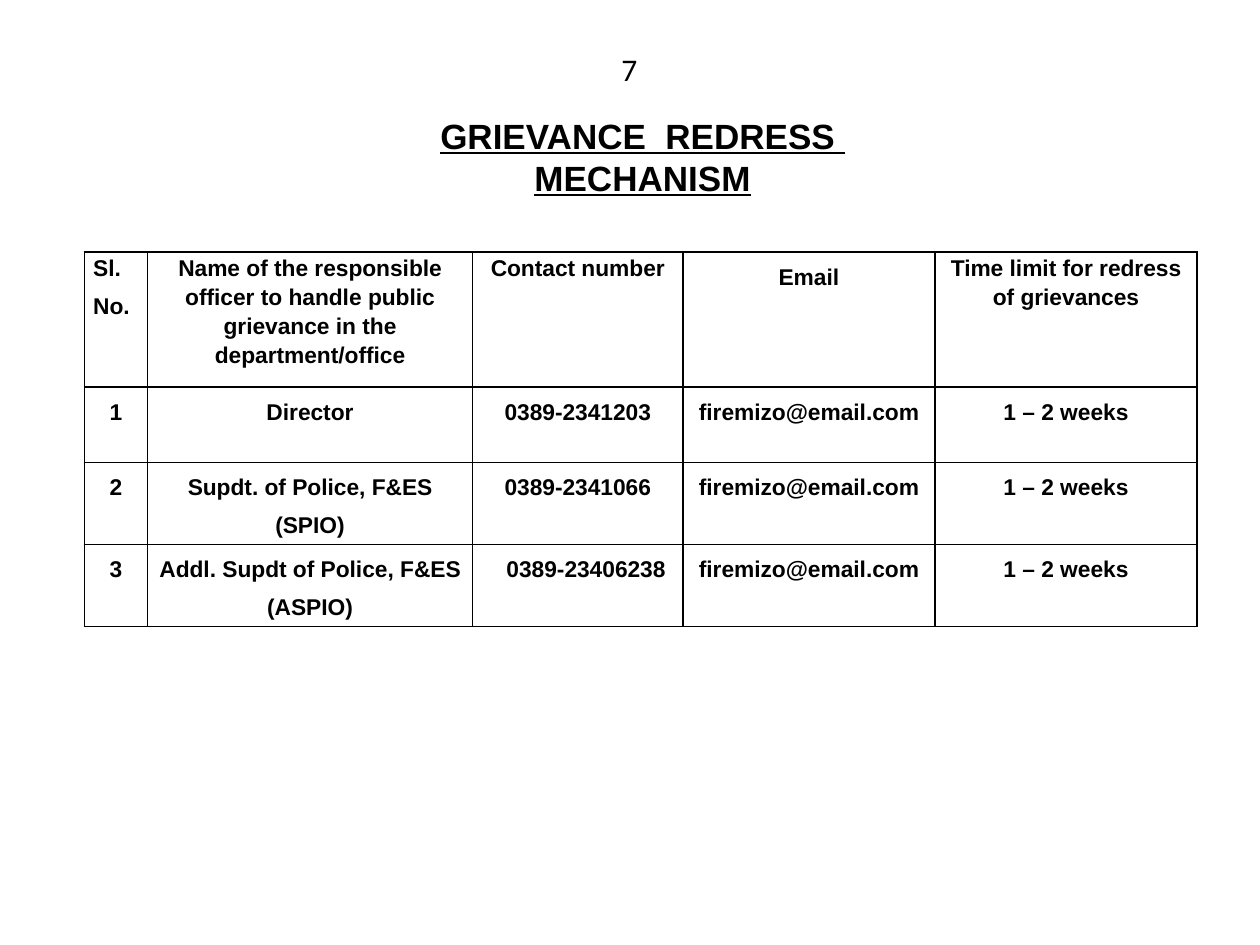
from lxml.etree import SubElement as Sub
from pptx import Presentation
from pptx.dml.color import RGBColor as RGB
from pptx.enum.text import MSO_ANCHOR as Anchor, PP_ALIGN as Align
from pptx.oxml.ns import qn
from pptx.util import Inches, Pt

HUES = {"ink": "000000", "page": "FFFFFF"}
COLS = [0.5, 2.58, 1.67, 2, 2.08]
ROWS = [1.07, 0.6, 0.65, 0.65]
MAIL, TIME = "firemizo@email.com", "1 – 2 weeks"
HEAD = ["Sl.\nNo.",
        "Name of the responsible officer to handle public grievance "
        "in the department/office",
        "Contact number", "Email", "Time limit for redress of grievances"]
STAFF = [("Director", "0389-2341203"),
         ("Supdt. of Police, F&ES\n(SPIO)", "0389-2341066"),
         ("Addl. Supdt of Police, F&ES\n(ASPIO)", "0389-23406238")]


def style(par, size, name="Arial", bold=True, line=False):
    font = par.font
    font.size, font.name, font.bold, font.underline = Pt(size), name, bold, line
    font.color.rgb = RGB.from_string(HUES["ink"])


def label(slide, box, text, anchor, **look):
    frame = slide.shapes.add_textbox(*map(Inches, box)).text_frame
    frame.word_wrap = False
    frame.vertical_anchor = anchor
    par = frame.paragraphs[0]
    par.text = text
    par.alignment = Align.CENTER
    style(par, **look)


def border(cell):
    props = cell._tc.get_or_add_tcPr()
    for i, side in enumerate(("lnL", "lnR", "lnT", "lnB")):
        line = props.makeelement(qn(f"a:{side}"), {"w": str(Pt(1))})
        fill = Sub(line, qn("a:solidFill"))
        Sub(fill, qn("a:srgbClr"), val=HUES["ink"])
        props.insert(i, line)


def fill_cell(cell, text, head):
    cell.margin_left = cell.margin_right = Inches(0.07)
    cell.margin_top = cell.margin_bottom = 0
    cell.fill.solid()
    cell.fill.fore_color.rgb = RGB.from_string(HUES["page"])
    border(cell)
    cell.text = text
    for i, par in enumerate(cell.text_frame.paragraphs):
        style(par, 13)
        par.alignment = Align.CENTER
        tight = head and i == 0 and text != "Email"
        par.line_spacing = 1.15 if tight else 1.5


def contacts(slide, left, top):
    data = [HEAD] + [[str(n), post, phone, MAIL, TIME]
                     for n, (post, phone) in enumerate(STAFF, 1)]
    box = map(Inches, (left, top, sum(COLS), sum(ROWS)))
    table = slide.shapes.add_table(len(ROWS), len(COLS), *box).table
    table.first_row = table.horz_banding = False
    for col, wide in zip(table.columns, COLS):
        col.width = Inches(wide)
    for r, (row, high) in enumerate(zip(table.rows, ROWS)):
        row.height = Inches(high)
        for cell, text in zip(row.cells, data[r]):
            fill_cell(cell, text, r == 0)
    for par in table.cell(0, 0).text_frame.paragraphs:
        par.alignment = Align.LEFT
    # The last phone number is set from the left, with an indent.
    phone = table.cell(3, 2)
    phone.margin_left = Inches(0.27)
    phone.margin_right = 0
    phone.text_frame.paragraphs[0].alignment = Align.LEFT


def main():
    deck = Presentation()
    deck.slide_width, deck.slide_height = Inches(10), Inches(7.5)
    slide = deck.slides.add_slide(deck.slide_layouts[6])
    label(slide, (2.5, 1.02, 5.2, 0.44), "GRIEVANCE  REDRESS  MECHANISM",
          Anchor.MIDDLE, size=20, line=True)
    contacts(slide, 0.67, 2)
    label(slide, (4.83, 0.35, 0.33, 0.4), "7", Anchor.TOP,
          size=18, name="Calibri", bold=False)
    deck.save("out.pptx")


if __name__ == "__main__":
    main()
